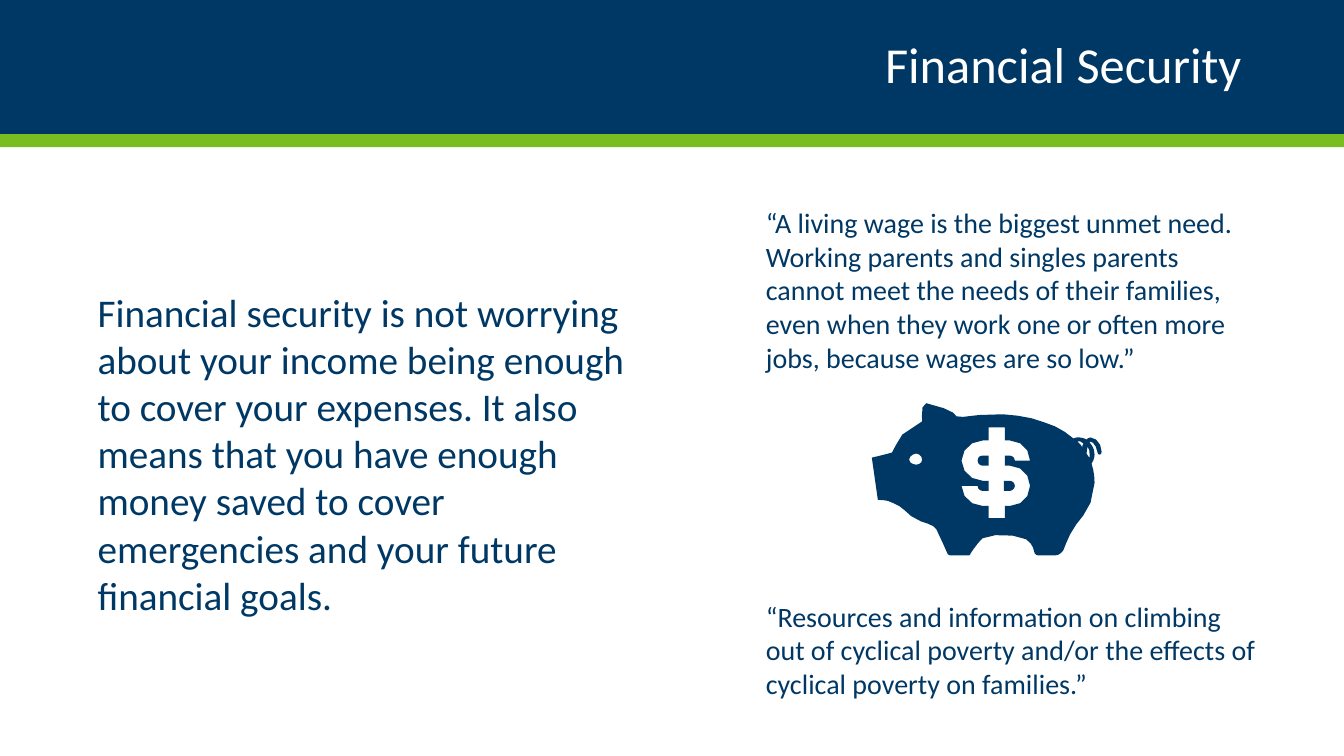
"""Build the Financial Security slide with its piggy bank."""
from dataclasses import dataclass, field
from typing import Any, Optional

from pptx import Presentation
from pptx.dml.color import RGBColor as Rgb
from pptx.enum.shapes import MSO_SHAPE as Preset
from pptx.enum.text import MSO_ANCHOR as Anchor, MSO_AUTO_SIZE as Fit, PP_ALIGN as Align
from pptx.shapes.autoshape import Shape
from pptx.slide import Slide
from pptx.util import Cm, Pt

Segment = tuple[float, ...]
Contour = list[Segment]


@dataclass(frozen=True)
class Theme:
    """Colours, font and type sizes of the slide."""
    navy: Rgb = Rgb(0x00, 0x38, 0x65)
    green: Rgb = Rgb(0x78, 0xBE, 0x21)
    white: Rgb = Rgb(0xFF, 0xFF, 0xFF)
    font: str = "Calibri"
    title: int = 36
    body: int = 28
    quote: int = 20


THEME = Theme()
WIDTH, HEIGHT = 33.87, 19.05
DRAWING_UNIT = Cm(0.0254)
CURVE_STEPS = 3


@dataclass(frozen=True)
class Band:
    """A full-width strip at the top, in centimetres."""
    top: float
    height: float
    color: Rgb


@dataclass(frozen=True)
class TextBlock:
    """A text box with its place in centimetres and its formats."""
    text: str
    place: tuple[float, float, float, float]
    size: int
    color: Rgb = THEME.navy
    fill: Optional[Rgb] = None
    frame: dict[str, Any] = field(default_factory=dict)
    para: dict[str, Any] = field(default_factory=dict)


BANDS = [Band(0, 3.39, THEME.navy), Band(3.38, 0.33, THEME.green)]

QUOTE_FRAME = {"auto_size": Fit.SHAPE_TO_FIT_TEXT}
BLOCKS = [
    TextBlock("Financial Security", (2.33, 0.43, 29.21, 2.54), THEME.title, THEME.white,
              frame={"vertical_anchor": Anchor.MIDDLE},
              para={"alignment": Align.RIGHT, "line_spacing": 0.9}),
    TextBlock("Financial security is not worrying about your income being enough to cover "
              "your expenses. It also means that you have enough money saved to cover "
              "emergencies and your future financial goals.",
              (2.21, 5.23, 14.4, 12.73), THEME.body, fill=THEME.white,
              frame={"margin_top": Cm(2.04)}),
    TextBlock("“A living wage is the biggest unmet need. Working parents and singles parents "
              "cannot meet the needs of their families, even when they work one or often more "
              "jobs, because wages are so low.”",
              (19.05, 5.06, 13, 4.52), THEME.quote, frame=QUOTE_FRAME),
    TextBlock("“Resources and information on climbing out of cyclical poverty and/or the "
              "effects of cyclical poverty on families.”",
              (19.05, 14.97, 13, 2.82), THEME.quote, frame=QUOTE_FRAME),
]

PIG_BODY: Contour = [
    (1082, 434), (1081, 434, 1079, 435, 1078, 436), (1076, 435, 1073, 434, 1071, 434),
    (1068, 434, 1067, 434, 1065, 435), (1057, 428, 1047, 422, 1036, 419),
    (1024, 414, 1010, 412, 995, 411), (968, 410, 950, 416, 949, 413),
    (948, 410, 941, 405, 919, 400), (913, 399, 915, 418, 915, 418),
    (885, 432, 891, 444, 885, 449), (882, 450, 865, 454, 865, 454), (871, 496),
    (875, 496, 881, 496, 886, 499), (894, 502, 897, 506, 904, 512),
    (916, 520, 920, 518, 926, 522), (929, 525), (929, 525, 938, 544, 940, 549),
    (940, 550, 942, 551, 943, 551), (961, 551), (962, 551, 963, 550, 963, 549),
    (965, 546, 971, 537, 975, 534), (982, 529, 1010, 530, 1018, 535),
    (1024, 539, 1025, 543, 1026, 547), (1026, 549, 1028, 551, 1030, 551), (1047, 551),
    (1050, 551, 1053, 549, 1055, 546), (1058, 539, 1060, 531, 1068, 520),
    (1073, 513, 1085, 503, 1086, 479), (1086, 472, 1085, 466, 1083, 460),
    (1085, 457, 1086, 454, 1086, 451), (1086, 446, 1084, 442, 1081, 439), (1082, 438),
    (1084, 438, 1088, 442, 1089, 449), (1089, 450, 1090, 451, 1091, 451),
    (1092, 451, 1093, 450, 1093, 448), (1093, 441, 1088, 434, 1082, 434),
]
EYE: Contour = [
    (909, 461), (906, 461, 902, 459, 902, 456), (902, 453, 906, 450, 909, 450),
    (912, 450, 915, 453, 915, 456), (915, 459, 912, 461, 909, 461),
]
DOLLAR: Contour = [
    (1002, 462), (1013, 462, 1022, 471, 1022, 482), (1022, 493, 1013, 502, 1002, 502),
    (997, 502), (997, 514), (981, 514), (981, 502), (975, 502),
    (964, 502, 954, 493, 954, 482), (970, 482), (970, 485, 972, 487, 975, 487),
    (981, 487), (981, 477), (975, 477), (964, 477, 954, 468, 954, 457),
    (954, 446, 964, 437, 975, 437), (981, 437), (981, 424), (997, 424), (997, 437),
    (1002, 437), (1013, 437, 1022, 446, 1022, 457), (1007, 457),
    (1007, 454, 1004, 452, 1002, 452), (997, 452), (997, 462),
]
TAIL_GAPS: list[Contour] = [
    [(1074, 442), (1074, 444), (1072, 441), (1069, 438), (1072, 438), (1075, 440)],
    [(1081, 454), (1080, 453), (1078, 450), (1079, 443), (1080, 445),
     (1081, 446, 1081, 449, 1081, 451)],
]
LOWER_BOWL: Contour = [
    (996, 487), (1002, 487), (1004, 487, 1007, 485, 1007, 482),
    (1007, 479, 1004, 477, 1002, 477), (996, 477),
]
UPPER_BOWL: Contour = [
    (970, 457), (970, 460, 972, 462, 975, 462), (981, 462), (981, 452), (975, 452),
    (972, 452, 970, 454, 970, 457),
]
PIGGY_BANK = [[LOWER_BOWL], [UPPER_BOWL], [PIG_BODY, EYE, DOLLAR, *TAIL_GAPS]]


def apply(target: Any, formats: dict[str, Any]) -> None:
    """Set each named format on the target."""
    for name, value in formats.items():
        setattr(target, name, value)


def paint(shape: Shape, color: Rgb) -> None:
    """Give a shape a plain fill without line or shadow."""
    shape.shadow.inherit = False
    shape.fill.solid()
    shape.fill.fore_color.rgb = color
    shape.line.fill.background()


def flatten(contour: Contour) -> list[tuple[float, float]]:
    """Turn lines and cubic curves into points in slide units."""
    points = [contour[0]]
    for segment in contour[1:]:
        if len(segment) == 2:
            points.append(segment)
            continue
        corners = [points[-1], segment[:2], segment[2:4], segment[4:]]
        for step in range(1, CURVE_STEPS + 1):
            t = step / CURVE_STEPS
            weights = ((1 - t) ** 3, 3 * t * (1 - t) ** 2, 3 * t * t * (1 - t), t ** 3)
            points.append(tuple(sum(w * c[axis] for w, c in zip(weights, corners))
                                for axis in (0, 1)))
    return [(x * DRAWING_UNIT, y * DRAWING_UNIT) for x, y in points]


def draw_outline(page: Slide, contours: list[Contour]) -> None:
    """Draw one filled outline, with later contours as holes."""
    first, *holes = map(flatten, contours)
    builder = page.shapes.build_freeform(*first[0], scale=1.0)
    builder.add_line_segments(first[1:], close=True)
    for hole in holes:
        builder.move_to(*hole[0])
        builder.add_line_segments(hole[1:], close=True)
    paint(builder.convert_to_shape(), THEME.navy)


def draw_band(page: Slide, band: Band) -> None:
    """Draw one strip across the slide."""
    place = map(Cm, (0, band.top, WIDTH, band.height))
    paint(page.shapes.add_shape(Preset.RECTANGLE, *place), band.color)


def draw_text(page: Slide, block: TextBlock) -> None:
    """Draw one wrapped text box."""
    box = page.shapes.add_textbox(*map(Cm, block.place))
    if block.fill is not None:
        paint(box, block.fill)
    apply(box.text_frame, {"word_wrap": True, **block.frame})
    para = box.text_frame.paragraphs[0]
    apply(para, block.para)
    span = para.add_run()
    span.text = block.text
    apply(span.font, {"name": THEME.font, "size": Pt(block.size)})
    span.font.color.rgb = block.color


def main() -> None:
    """Build and save the deck."""
    deck = Presentation()
    apply(deck, {"slide_width": Cm(WIDTH), "slide_height": Cm(HEIGHT)})
    page = deck.slides.add_slide(deck.slide_layouts[6])
    for band in BANDS:
        draw_band(page, band)
    for block in BLOCKS:
        draw_text(page, block)
    for contours in PIGGY_BANK:
        draw_outline(page, contours)
    deck.save("out.pptx")


if __name__ == "__main__":
    main()
